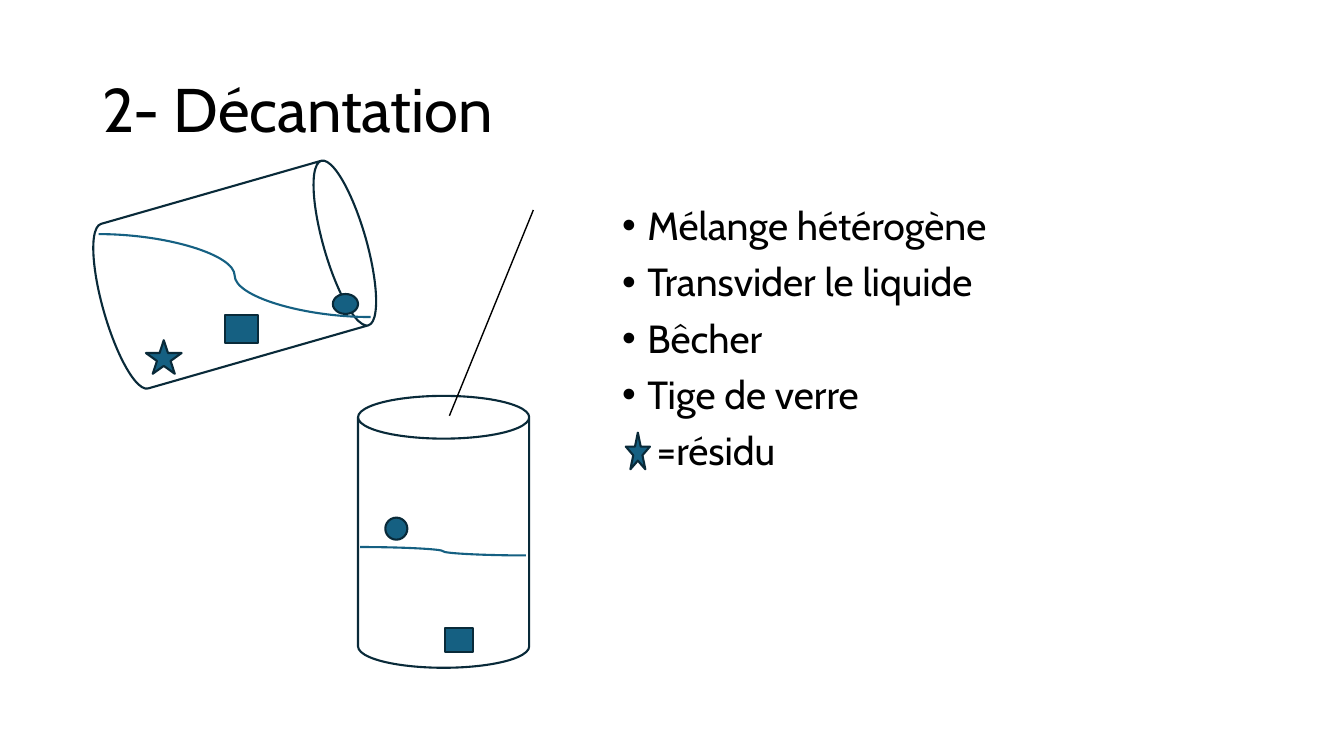
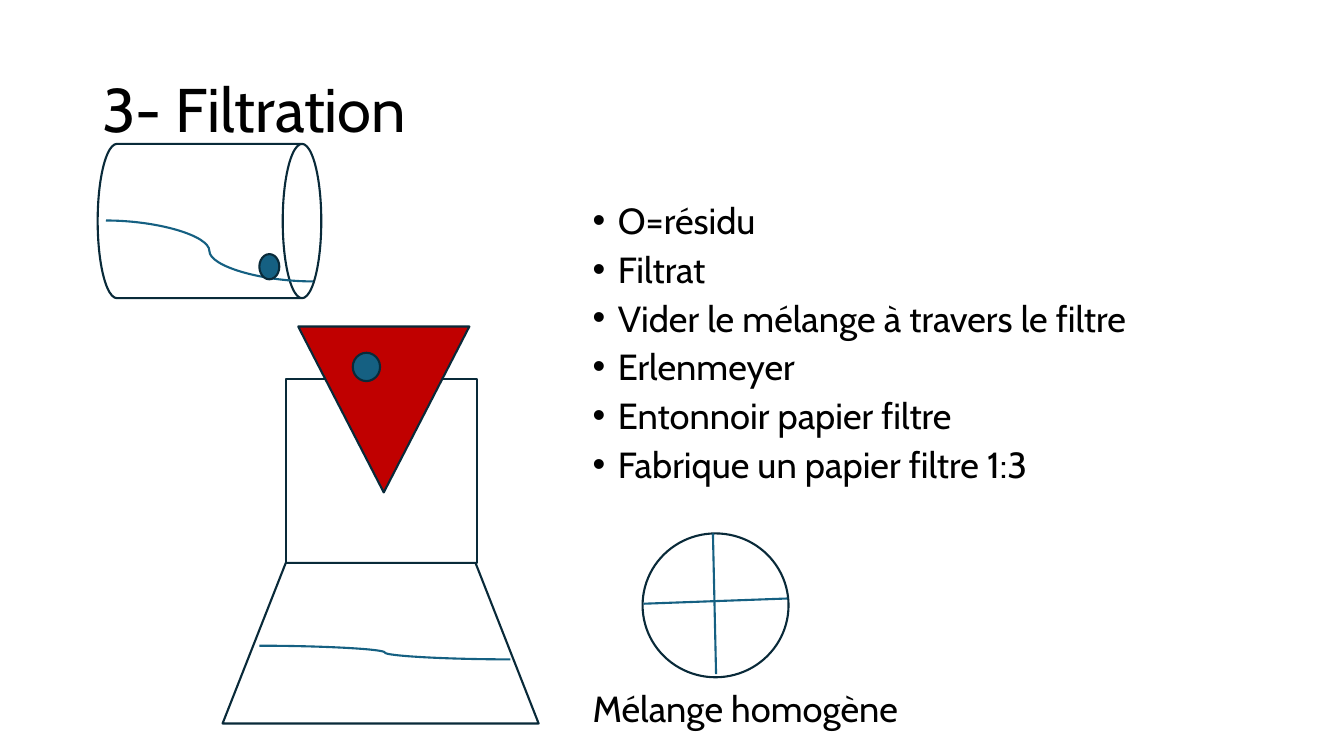
"""Build two chemistry slides on decantation and filtration."""
from lxml import etree
from pptx import Presentation
from pptx.dml.color import RGBColor
from pptx.enum.shapes import MSO_CONNECTOR, MSO_SHAPE
from pptx.enum.text import MSO_ANCHOR
from pptx.oxml.ns import qn
from pptx.util import Emu, Pt

CAN, STAR, OVAL = MSO_SHAPE.CAN, MSO_SHAPE.STAR_5_POINT, MSO_SHAPE.OVAL
RECTANGLE = MSO_SHAPE.RECTANGLE
FLASK, FUNNEL = MSO_SHAPE.FLOWCHART_MANUAL_OPERATION, MSO_SHAPE.FLOWCHART_MERGE
STRAIGHT, CURVE = MSO_CONNECTOR.STRAIGHT, MSO_CONNECTOR.CURVE
MIDDLE, TOP = MSO_ANCHOR.MIDDLE, MSO_ANCHOR.TOP

BLANK_LAYOUT = 6
FONT = "Cabin"
BLACK, WHITE, RED = "000000", "FFFFFF", "C00000"
TEAL, OUTLINE = "156082", "092A39"
LINE_WIDTH = 1.5
BULLET_INDENT = 24
TITLE_BOX = (88, 38, 1104, 139)
TITLE_STYLE = {"size": 44, "line_spacing": 0.9, "space_before": 0}


def px(value):
    """Convert pixels to EMU."""
    return Emu(value * 9525)


def color(value):
    """Convert a hex string to a colour."""
    return RGBColor.from_string(value)


def set_values(target, values):
    """Set every named attribute on the target."""
    for name, value in values.items():
        setattr(target, name, value)


def set_line(line, line_color, width):
    """Set the colour and the width of a line."""
    line.color.rgb = color(line_color)
    line.width = Pt(width)


def add_text_frame(slide, box, anchor=TOP):
    """Add a wrapping text box and return its text frame."""
    frame = slide.shapes.add_textbox(*map(px, box)).text_frame
    set_values(frame, {"word_wrap": True, "vertical_anchor": anchor})
    return frame


def write_paragraph(paragraph, text, size, line_spacing, space_before):
    """Fill a paragraph with formatted text."""
    set_values(paragraph, {"line_spacing": line_spacing,
                           "space_before": Pt(space_before)})
    run = paragraph.add_run()
    run.text = text
    set_values(run.font, {"name": FONT, "size": Pt(size)})
    run.font.color.rgb = color(BLACK)


def indent_paragraph(paragraph, margin):
    """Set the left margin of a paragraph."""
    paragraph._p.get_or_add_pPr().set("marL", str(px(margin)))


def add_bullet(paragraph):
    """Give a paragraph a hanging bullet."""
    indent_paragraph(paragraph, BULLET_INDENT)
    properties = paragraph._p.get_or_add_pPr()
    properties.set("indent", str(px(-BULLET_INDENT)))
    etree.SubElement(properties, qn("a:buFont")).set("typeface", "Arial")
    etree.SubElement(properties, qn("a:buChar")).set("char", "•")


def add_body(slide, box, bullets, closing, style, closing_gap, closing_indent=0):
    """Add a bullet list and an unbulleted closing line."""
    frame = add_text_frame(slide, box)
    for index, text in enumerate(bullets):
        paragraph = frame.add_paragraph() if index else frame.paragraphs[0]
        write_paragraph(paragraph, text, **style)
        add_bullet(paragraph)
    paragraph = frame.add_paragraph()
    write_paragraph(paragraph, closing, **{**style, "space_before": closing_gap})
    indent_paragraph(paragraph, closing_indent)


def add_figure(slide, kind, box, fill=None, rotation=0):
    """Add an outlined shape, filled or hollow."""
    shape = slide.shapes.add_shape(kind, *map(px, box))
    shape.rotation = rotation
    shape.shadow.inherit = False
    if fill:
        shape.fill.solid()
        shape.fill.fore_color.rgb = color(fill)
    else:
        shape.fill.background()
    set_line(shape.line, OUTLINE, LINE_WIDTH)


def add_line(slide, kind, ends, line_color=TEAL, width=LINE_WIDTH):
    """Add a straight or curved line without shadow."""
    connector = slide.shapes.add_connector(kind, *map(px, ends))
    set_line(connector.line, line_color, width)
    etree.SubElement(connector._element.spPr, qn("a:effectLst"))


def add_titled_slide(presentation, title):
    """Add a blank slide with a title."""
    slide = presentation.slides.add_slide(presentation.slide_layouts[BLANK_LAYOUT])
    frame = add_text_frame(slide, TITLE_BOX, MIDDLE)
    write_paragraph(frame.paragraphs[0], title, **TITLE_STYLE)
    return slide


def build_decantation(presentation):
    """Build the decantation slide."""
    slide = add_titled_slide(presentation, "2- Décantation")
    add_body(slide, (583, 192, 609, 457),
             ["Mélange hétérogène", "Transvider le liquide", "Bêcher", "Tige de verre"],
             "=résidu", {"size": 28, "line_spacing": 0.9, "space_before": 10},
             closing_gap=10, closing_indent=33)
    add_figure(slide, CAN, (341, 377, 163, 259))
    add_figure(slide, CAN, (142, 132, 163, 259), WHITE, 74)
    add_line(slide, CURVE, (94, 223, 353, 302))
    add_line(slide, CURVE, (343, 521, 501, 529))
    add_line(slide, STRAIGHT, (508, 200, 428, 396), BLACK, 1)
    for kind, box in (
        (STAR, (596, 412, 23, 35)),
        (OVAL, (367, 493, 21, 21)),
        (RECTANGLE, (424, 598, 27, 23)),
        (STAR, (139, 324, 34, 32)),
        (RECTANGLE, (214, 300, 32, 27)),
        (OVAL, (317, 280, 24, 19)),
    ):
        add_figure(slide, kind, box, TEAL)


def build_filtration(presentation):
    """Build the filtration slide."""
    slide = add_titled_slide(presentation, "3- Filtration")
    add_body(slide, (555, 192, 637, 528),
             ["O=résidu", "Filtrat", "Vider le mélange à travers le filtre",
              "Erlenmeyer", "Entonnoir papier filtre", "Fabrique un papier filtre 1:3"],
             "Mélange homogène", {"size": 25.9, "line_spacing": 0.8, "space_before": 10},
             closing_gap=149)
    add_figure(slide, OVAL, (612, 508, 139, 137))
    add_line(slide, STRAIGHT, (679, 508, 682, 642))
    add_line(slide, STRAIGHT, (613, 575, 750, 570))
    add_figure(slide, FLASK, (212, 536, 301, 153), rotation=180)
    add_figure(slide, RECTANGLE, (272, 361, 182, 175))
    add_figure(slide, CAN, (126, 104, 147, 213), rotation=90)
    add_line(slide, CURVE, (101, 210, 298, 268))
    add_line(slide, CURVE, (247, 615, 486, 628))
    add_figure(slide, FUNNEL, (284, 311, 163, 158), RED)
    for box in ((247, 242, 19, 24), (336, 336, 26, 27)):
        add_figure(slide, OVAL, box, TEAL)


def main():
    """Build and save the presentation."""
    presentation = Presentation()
    set_values(presentation, {"slide_width": px(1280), "slide_height": px(720)})
    build_decantation(presentation)
    build_filtration(presentation)
    presentation.save("out.pptx")


if __name__ == "__main__":
    main()
